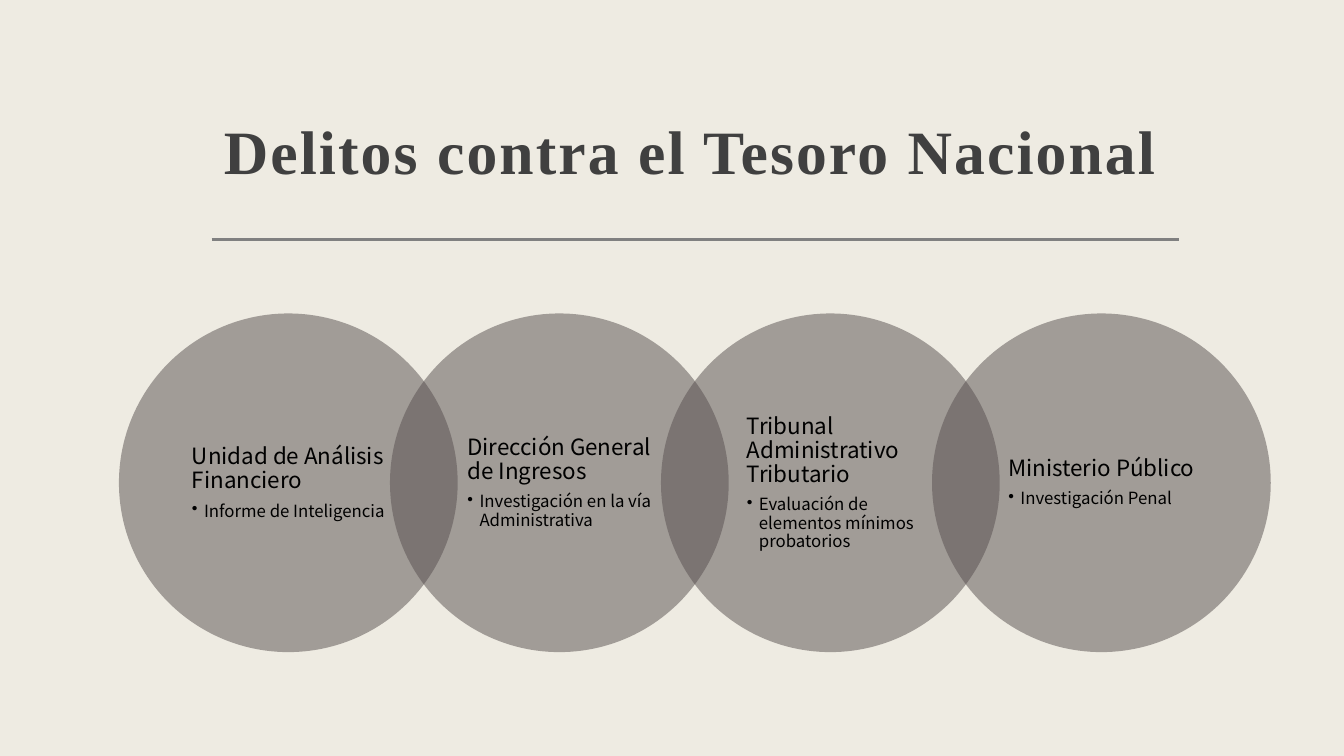
import dataclasses

import pptx
import pptx.dml.color
import pptx.enum.shapes
import pptx.enum.text
import pptx.oxml.ns
import pptx.oxml.xmlchemy
import pptx.slide
import pptx.text.text
import pptx.util

Inches = pptx.util.Inches
Pt = pptx.util.Pt
RGBColor = pptx.dml.color.RGBColor
Anchor = pptx.enum.text.MSO_ANCHOR

BACKGROUND = RGBColor(0xEE, 0xEB, 0xE2)
TITLE_COLOR = RGBColor(0x40, 0x40, 0x40)
RULE_COLOR = RGBColor(0x80, 0x80, 0x80)
CIRCLE_COLOR = RGBColor(0x56, 0x4E, 0x4E)
BODY_COLOR = RGBColor(0x00, 0x00, 0x00)
TITLE_FONT = "Times New Roman"
BODY_FONT = "Noto Sans CJK JP"

CIRCLE_LEFT = 1.18
CIRCLE_TOP = 3.11
CIRCLE_SIZE = 3.36
CIRCLE_STEP = 0.8 * CIRCLE_SIZE
TEXT_SIZE = 2.38
TEXT_OFFSET = (CIRCLE_SIZE - TEXT_SIZE) / 2
BULLET_INDENT = 0.12


@dataclasses.dataclass(frozen=True)
class Institution:
    name: str
    task: str


INSTITUTIONS = [
    Institution("Unidad de Análisis Financiero", "Informe de Inteligencia"),
    Institution("Dirección General de Ingresos", "Investigación en la vía Administrativa"),
    Institution("Tribunal Administrativo Tributario", "Evaluación de elementos mínimos probatorios"),
    Institution("Ministerio Público", "Investigación Penal"),
]


def append_xml(parent: pptx.oxml.xmlchemy.BaseOxmlElement, tag: str, **attributes: str) -> None:
    element = pptx.oxml.xmlchemy.OxmlElement(tag)
    for name, value in attributes.items():
        element.set(name, value)
    parent.append(element)


def write_text(
    paragraph: pptx.text.text._Paragraph,
    text: str,
    *,
    size: float,
    font: str = BODY_FONT,
    color: RGBColor = BODY_COLOR,
    bold: bool = False,
    line_spacing: float = 0.9,
    space_after: float = 0,
    letter_spacing: float = 0,
    bullet: bool = False,
) -> None:
    paragraph.alignment = pptx.enum.text.PP_ALIGN.LEFT
    paragraph.line_spacing = line_spacing
    paragraph.space_before = Pt(0)
    paragraph.space_after = Pt(space_after)
    run = paragraph.add_run()
    run.text = text
    run.font.name = font
    run.font.size = Pt(size)
    run.font.bold = bold
    run.font.color.rgb = color
    properties = run._r.get_or_add_rPr()
    append_xml(properties, "a:ea", typeface=font)
    if letter_spacing:
        properties.set("spc", str(round(letter_spacing * 100)))
    if bullet:
        paragraph.level = 1
        indent = Inches(BULLET_INDENT)
        paragraph_properties = paragraph._p.get_or_add_pPr()
        paragraph_properties.set("marL", str(indent))
        paragraph_properties.set("indent", str(-indent))
        append_xml(paragraph_properties, "a:buChar", char="•")


def set_frame(
    frame: pptx.text.text.TextFrame, anchor: Anchor, left: float, top: float, right: float, bottom: float
) -> None:
    frame.word_wrap = True
    frame.auto_size = pptx.enum.text.MSO_AUTO_SIZE.NONE
    frame.vertical_anchor = anchor
    frame.margin_left, frame.margin_top = Inches(left), Inches(top)
    frame.margin_right, frame.margin_bottom = Inches(right), Inches(bottom)


def add_title(slide: pptx.slide.Slide) -> None:
    title = slide.shapes.title
    title.left, title.top = Inches(2.1), Inches(0.48)
    title.width, title.height = Inches(9.59), Inches(1.47)
    set_frame(title.text_frame, Anchor.BOTTOM, 0.12, 0.12, 0.12, 0.1)
    write_text(
        title.text_frame.paragraphs[0],
        "Delitos contra el Tesoro Nacional",
        size=44,
        font=TITLE_FONT,
        color=TITLE_COLOR,
        bold=True,
        line_spacing=1.3,
        letter_spacing=1.5,
    )


def add_rule(slide: pptx.slide.Slide) -> None:
    rule = slide.shapes.add_connector(
        pptx.enum.shapes.MSO_CONNECTOR.STRAIGHT, Inches(2.1), Inches(2.38), Inches(11.69), Inches(2.38)
    )
    rule.line.color.rgb = RULE_COLOR
    rule.line.width = Pt(2)
    append_xml(rule._element.spPr, "a:effectLst")


def add_institution(slide: pptx.slide.Slide, institution: Institution, left: float) -> None:
    circle = slide.shapes.add_shape(
        pptx.enum.shapes.MSO_SHAPE.OVAL,
        Inches(left), Inches(CIRCLE_TOP), Inches(CIRCLE_SIZE), Inches(CIRCLE_SIZE),
    )
    circle.shadow.inherit = False
    circle.fill.solid()
    circle.fill.fore_color.rgb = CIRCLE_COLOR
    circle.line.fill.background()
    fill_color = circle._element.spPr.find(".//" + pptx.oxml.ns.qn("a:srgbClr"))
    append_xml(fill_color, "a:alpha", val="50000")

    text_box = slide.shapes.add_textbox(
        Inches(left + TEXT_OFFSET), Inches(CIRCLE_TOP + TEXT_OFFSET), Inches(TEXT_SIZE), Inches(TEXT_SIZE)
    )
    frame = text_box.text_frame
    set_frame(frame, Anchor.MIDDLE, 0.18, 0.02, 0.18, 0.02)
    frame._txBody.bodyPr.set("anchorCtr", "1")
    write_text(frame.paragraphs[0], institution.name, size=16, space_after=6.5)
    write_text(frame.add_paragraph(), institution.task, size=12, space_after=2, bullet=True)


def main() -> None:
    presentation = pptx.Presentation()
    presentation.slide_width, presentation.slide_height = Inches(13.33), Inches(7.5)
    slide = presentation.slides.add_slide(presentation.slide_layouts.get_by_name("Title Only"))
    slide.background.fill.solid()
    slide.background.fill.fore_color.rgb = BACKGROUND
    add_rule(slide)
    add_title(slide)
    for index, institution in enumerate(INSTITUTIONS):
        add_institution(slide, institution, CIRCLE_LEFT + index * CIRCLE_STEP)
    presentation.save("out.pptx")


if __name__ == "__main__":
    main()
